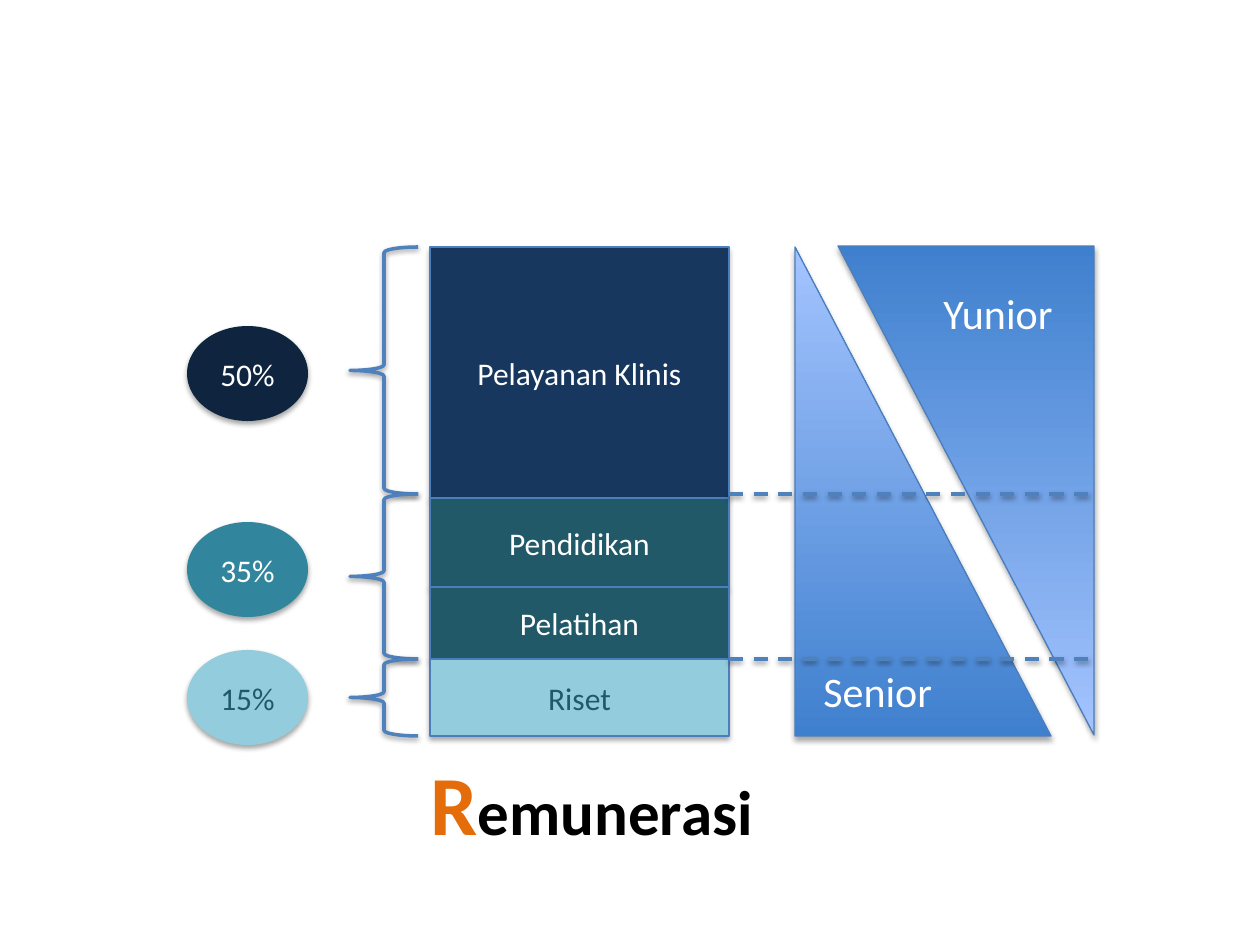
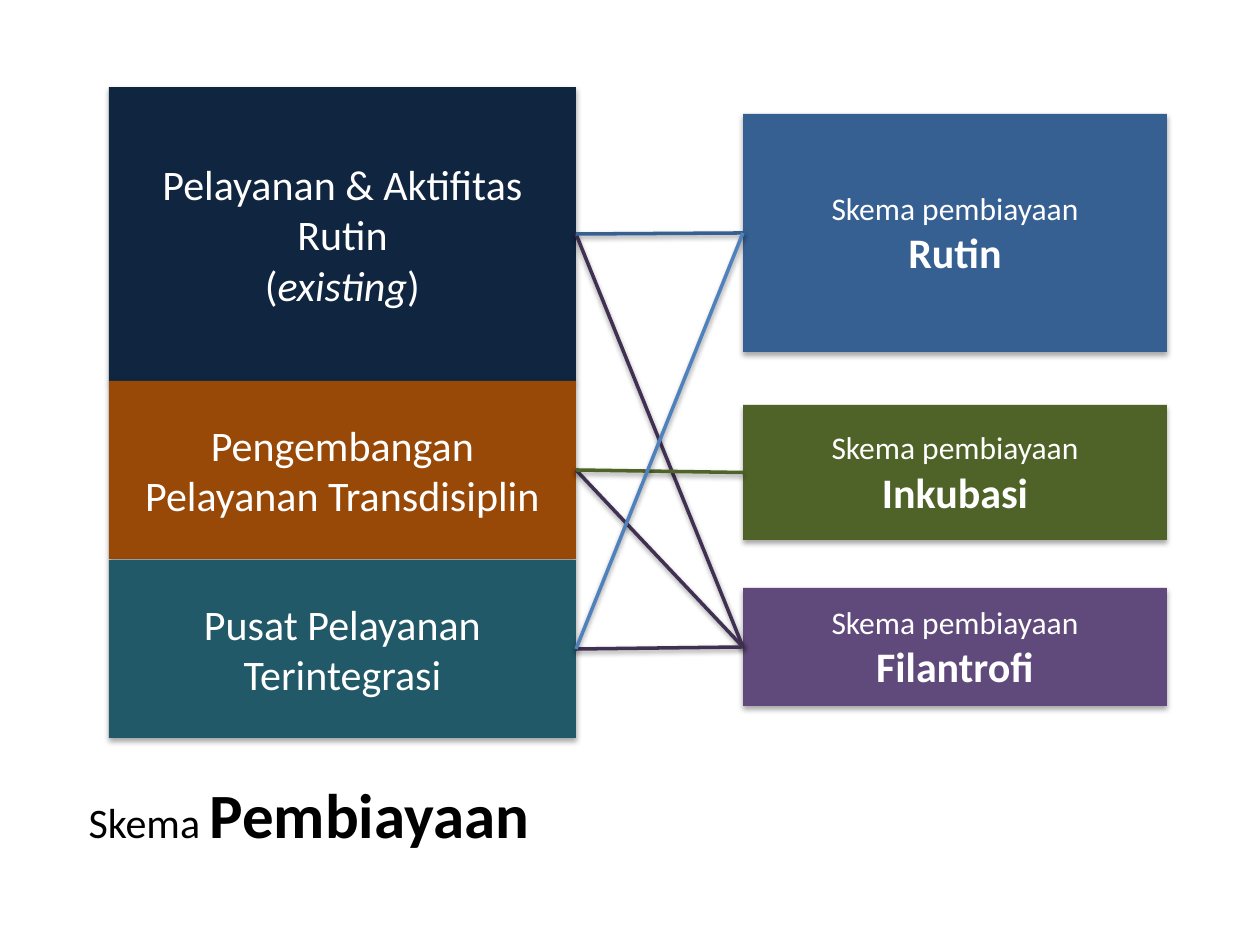
from dataclasses import dataclass
from itertools import pairwise
from typing import Any, NamedTuple

from lxml import etree
from pptx import Presentation
from pptx.dml.color import RGBColor
from pptx.enum.dml import MSO_LINE
from pptx.enum.shapes import MSO_CONNECTOR, MSO_SHAPE
from pptx.enum.text import MSO_ANCHOR, MSO_AUTO_SIZE, PP_ALIGN
from pptx.oxml.ns import qn
from pptx.util import Emu, Pt

EMU_PER_PX = 914400 / 126
SLIDE_SIZE = (1260, 945)
TITLE_ONLY = 5
RIGHT_SIDE, LEFT_SIDE = 3, 1

RECTANGLE = MSO_SHAPE.RECTANGLE
ELLIPSE = MSO_SHAPE.OVAL
TRIANGLE = MSO_SHAPE.RIGHT_TRIANGLE
BRACE = MSO_SHAPE.LEFT_BRACE
STRAIGHT = MSO_CONNECTOR.STRAIGHT
DASH = MSO_LINE.DASH
LEFT, CENTER = PP_ALIGN.LEFT, PP_ALIGN.CENTER
TOP, MIDDLE = MSO_ANCHOR.TOP, MSO_ANCHOR.MIDDLE
GROW = MSO_AUTO_SIZE.SHAPE_TO_FIT_TEXT

FONT = "Calibri"
BLACK = RGBColor(0x00, 0x00, 0x00)
WHITE = RGBColor(0xFF, 0xFF, 0xFF)
ORANGE = RGBColor(0xE4, 0x6C, 0x0A)
BROWN = RGBColor(0x98, 0x48, 0x07)
NIGHT = RGBColor(0x0F, 0x24, 0x3E)
MIDNIGHT = RGBColor(0x10, 0x25, 0x3F)
NAVY = RGBColor(0x17, 0x37, 0x5E)
STEEL = RGBColor(0x37, 0x60, 0x92)
BLUE = RGBColor(0x4F, 0x81, 0xBD)
EDGE = RGBColor(0x4B, 0x7E, 0xBC)
DEEP_TEAL = RGBColor(0x21, 0x59, 0x68)
TEAL = RGBColor(0x31, 0x85, 0x9C)
AQUA = RGBColor(0x93, 0xCD, 0xDD)
OLIVE = RGBColor(0x4F, 0x62, 0x28)
PURPLE = RGBColor(0x60, 0x4A, 0x7B)
PLUM = RGBColor(0x40, 0x31, 0x52)
GRADIENT = (RGBColor(0x3F, 0x80, 0xCE), RGBColor(0xA4, 0xC4, 0xFF))


class Box(NamedTuple):
    left: int
    top: int
    width: int
    height: int


class Run(NamedTuple):
    text: str
    size: int = 18
    color: RGBColor = WHITE
    bold: bool = False
    italic: bool = False


class Outline(NamedTuple):
    color: RGBColor
    width: float


class Shadow(NamedTuple):
    alpha: int
    distance: float


Lines = list[list[Run]]
SOLID_SHADOW = Shadow(35, 1.8)
LINE_SHADOW = Shadow(38, 1.6)
THIN_EDGE = Outline(EDGE, 0.75)


@dataclass
class Panel:
    box: Box
    fill: RGBColor
    lines: Lines
    kind: Any = RECTANGLE
    outline: Outline | None = None


def px(value: float) -> Emu:
    return Emu(round(value * EMU_PER_PX))


def emu_box(box: Box) -> list[Emu]:
    return [px(length) for length in box]


def apply(target: Any, values: dict[str, Any]) -> None:
    for name, value in values.items():
        setattr(target, name, value)


def write(frame: Any, lines: Lines, align: Any, anchor: Any) -> None:
    apply(frame, {"word_wrap": True, "vertical_anchor": anchor})
    for index, line in enumerate(lines):
        paragraph = frame.add_paragraph() if index else frame.paragraphs[0]
        paragraph.alignment = align
        for piece in line:
            run = paragraph.add_run()
            run.text = piece.text
            apply(run.font, {"name": FONT, "size": Pt(piece.size),
                             "bold": piece.bold, "italic": piece.italic})
            run.font.color.rgb = piece.color


def add_shadow(effects: Any, shadow: Shadow) -> None:
    outer = etree.SubElement(effects, qn("a:outerShdw"), {
        "blurRad": str(Pt(3.1)), "dist": str(Pt(shadow.distance)),
        "dir": "5400000", "rotWithShape": "0"})
    color = etree.SubElement(outer, qn("a:srgbClr"), val="000000")
    etree.SubElement(color, qn("a:alpha"), val=str(shadow.alpha * 1000))


def draw_outline(line: Any, outline: Outline | None) -> None:
    if outline is None:
        line.fill.background()
        return
    line.color.rgb = outline.color
    line.width = Pt(outline.width)


def add_figure(slide: Any, kind: Any, box: Box, outline: Outline | None,
               shadow: Shadow = SOLID_SHADOW) -> Any:
    figure = slide.shapes.add_shape(kind, *emu_box(box))
    draw_outline(figure.line, outline)
    figure.shadow.inherit = False
    add_shadow(figure.element.spPr.find(qn("a:effectLst")), shadow)
    return figure


def add_panel(slide: Any, panel: Panel) -> Any:
    figure = add_figure(slide, panel.kind, panel.box, panel.outline)
    figure.fill.solid()
    figure.fill.fore_color.rgb = panel.fill
    write(figure.text_frame, panel.lines, CENTER, MIDDLE)
    return figure


def add_wedge(slide: Any, box: Box, rotation: int) -> None:
    wedge = add_figure(slide, TRIANGLE, box, THIN_EDGE)
    wedge.rotation = rotation
    wedge.fill.gradient()
    wedge.fill.gradient_angle = 90
    for stop, color in zip(wedge.fill.gradient_stops, GRADIENT):
        stop.color.rgb = color


def add_brace(slide: Any, box: Box) -> None:
    brace = add_figure(slide, BRACE, box, Outline(BLUE, 2), LINE_SHADOW)
    brace.fill.background()


def add_line(slide: Any, color: RGBColor, start: tuple[int, int] = (0, 0),
             end: tuple[int, int] = (0, 0)) -> Any:
    line = slide.shapes.add_connector(
        STRAIGHT, *(px(value) for value in (*start, *end)))
    draw_outline(line.line, Outline(color, 2))
    add_shadow(etree.SubElement(line.element.spPr, qn("a:effectLst")), LINE_SHADOW)
    return line


def add_label(slide: Any, box: Box, text: str) -> None:
    label = slide.shapes.add_textbox(*emu_box(box))
    write(label.text_frame, [[Run(text, 24)]], LEFT, TOP)


def add_titled_slide(deck: Any, box: Box, runs: list[Run]) -> Any:
    slide = deck.slides.add_slide(deck.slide_layouts[TITLE_ONLY])
    title = slide.shapes.title
    apply(title, dict(zip(("left", "top", "width", "height"), emu_box(box))))
    write(title.text_frame, [runs], LEFT, TOP)
    title.text_frame.auto_size = GROW
    return slide


def build_remuneration(deck: Any) -> None:
    slide = add_titled_slide(deck, Box(418, 745, 663, 115), [
        Run("R", 48, ORANGE, True), Run("emunerasi", 36, BLACK, True)])

    activities = [("Pelayanan Klinis", NAVY, WHITE), ("Pendidikan", DEEP_TEAL, WHITE),
                  ("Pelatihan", DEEP_TEAL, WHITE), ("Riset", AQUA, DEEP_TEAL)]
    activity_edges = pairwise((247, 498, 587, 659, 736))
    for (name, fill, ink), (top, bottom) in zip(activities, activity_edges):
        add_panel(slide, Panel(Box(430, top, 299, bottom - top), fill,
                               [[Run(name, color=ink)]], outline=THIN_EDGE))

    add_wedge(slide, Box(795, 247, 256, 489), 0)
    add_wedge(slide, Box(838, 246, 256, 489), 180)
    add_label(slide, Box(931, 281, 141, 63), "Yunior")
    add_label(slide, Box(811, 659, 141, 63), "Senior")

    share_edges = (247, 494, 659, 736)
    for level in share_edges[1:-1]:
        add_line(slide, BLUE, (729, level), (1092, level)).line.dash_style = DASH
    for top, bottom in pairwise(share_edges):
        add_brace(slide, Box(350, top, 68, bottom - top))

    shares = [("50%", 326, NIGHT, WHITE), ("35%", 522, TEAL, WHITE),
              ("15%", 650, AQUA, DEEP_TEAL)]
    for share, top, fill, ink in shares:
        add_panel(slide, Panel(Box(187, top, 121, 95), fill,
                               [[Run(share, color=ink)]], ELLIPSE))


def build_financing(deck: Any) -> None:
    slide = add_titled_slide(deck, Box(76, 769, 741, 89), [
        Run("Skema ", 24, BLACK), Run("Pembiayaan", 36, BLACK, True)])

    services = [
        (87, 294, MIDNIGHT, [[Run("Pelayanan & Aktifitas Rutin", 24)],
                             [Run("(", 24), Run("existing", 24, italic=True),
                              Run(")", 24)]]),
        (381, 178, BROWN, [[Run("Pengembangan Pelayanan Transdisiplin", 24)]]),
        (560, 178, DEEP_TEAL, [[Run("Pusat Pelayanan Terintegrasi", 24)]])]
    routine, development, integrated = [
        add_panel(slide, Panel(Box(109, top, 467, height), fill, lines))
        for top, height, fill, lines in services]

    schemes = [("Rutin", 114, 238, STEEL), ("Inkubasi", 405, 135, OLIVE),
               ("Filantrofi", 588, 118, PURPLE)]
    regular, incubation, philanthropy = [
        add_panel(slide, Panel(Box(743, top, 424, height), fill,
                               [[Run("Skema pembiayaan")],
                                [Run(name, 24, bold=True)]]))
        for name, top, height, fill in schemes]

    funding = [(routine, philanthropy, PLUM), (development, philanthropy, PLUM),
               (integrated, philanthropy, PLUM), (development, incubation, OLIVE),
               (routine, regular, STEEL), (integrated, regular, BLUE)]
    for service, scheme, color in funding:
        link = add_line(slide, color)
        link.begin_connect(service, RIGHT_SIDE)
        link.end_connect(scheme, LEFT_SIDE)


def main() -> None:
    deck = Presentation()
    deck.slide_width, deck.slide_height = (px(side) for side in SLIDE_SIZE)
    build_remuneration(deck)
    build_financing(deck)
    deck.save("out.pptx")


if __name__ == "__main__":
    main()
